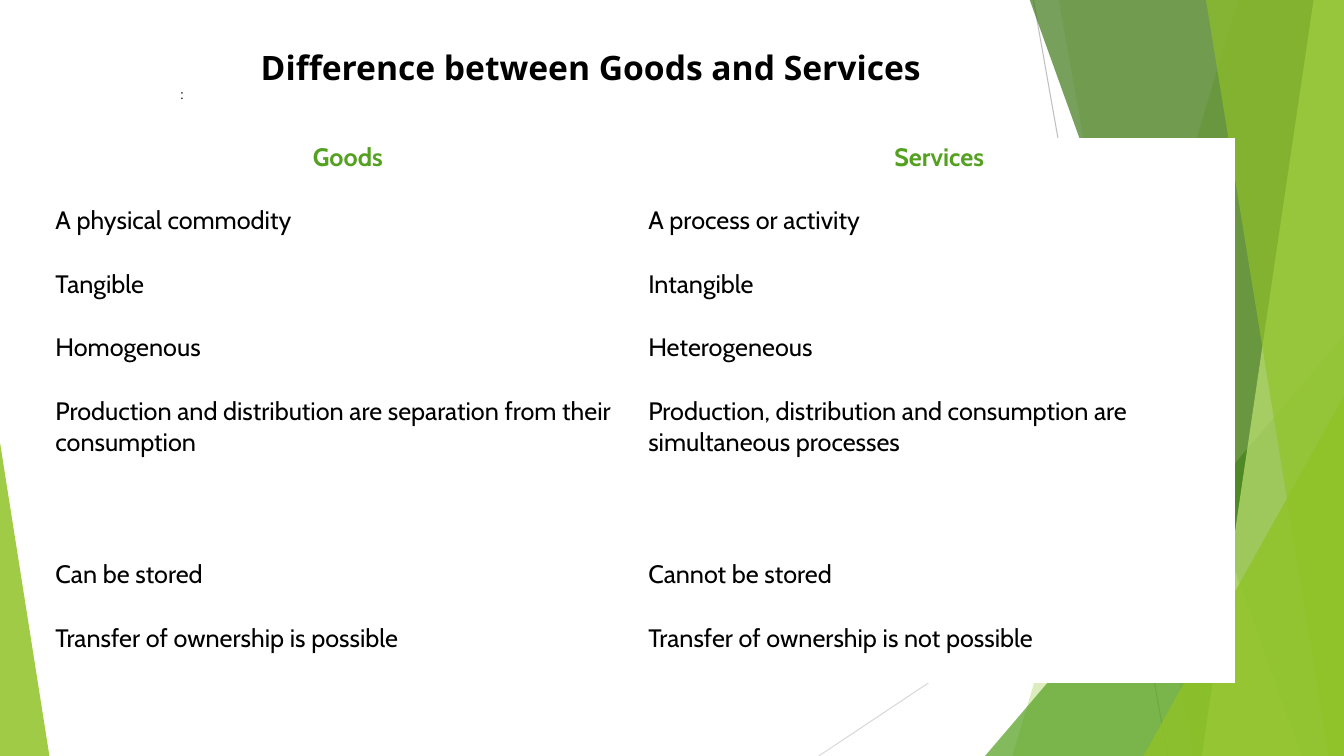
from dataclasses import dataclass

from lxml import etree
from pptx import Presentation
from pptx.dml.color import RGBColor
from pptx.enum.shapes import MSO_CONNECTOR, MSO_SHAPE
from pptx.enum.text import MSO_ANCHOR, PP_ALIGN
from pptx.oxml.ns import qn
from pptx.util import Emu, Inches, Pt

STRAIGHT = MSO_CONNECTOR.STRAIGHT
RECT, TRIANGLE = MSO_SHAPE.RECTANGLE, MSO_SHAPE.ISOSCELES_TRIANGLE
LEFT, CENTER = PP_ALIGN.LEFT, PP_ALIGN.CENTER
MIDDLE = MSO_ANCHOR.MIDDLE


@dataclass(frozen=True)
class Theme:
    lime: str = "90C226"
    green: str = "54A021"
    forest: str = "3F7819"
    pale: str = "C0E474"
    white: str = "FFFFFF"
    black: str = "000000"
    gray: str = "BFBFBF"
    light_gray: str = "D9D9D9"
    title_font: str = "Open Sans"
    body_font: str = "Cabin"
    title_size: float = 24
    body_size: float = 18
    small_size: float = 9


T = Theme()
W, H = 13.33, 7.5

TITLE = "Difference between Goods and Services"
MARK = ":"
ROWS = [
    ("Goods", "Services"),
    ("A physical commodity", "A process or activity"),
    ("Tangible", "Intangible"),
    ("Homogenous", "Heterogeneous"),
    ("Production and distribution are separation from their consumption",
     "Production, distribution and consumption are simultaneous processes"),
    ("Can be stored", "Cannot be stored"),
    ("Transfer of ownership is possible", "Transfer of ownership is not possible"),
]
COL_WIDTHS = (5.88, 5.85)
ROW_HEIGHT, TALL_ROW, TALL_HEIGHT = 0.63, 4, 1.62
TABLE_LEFT, TABLE_TOP = 0.51, 1.37
CELL_INSET = 0.04
TITLE_BOX = (1.79, 0.46, 8.14, 0.56)

LINES = [
    ((10.25, 0), (11.58, H), T.gray),
    ((W, 4.03), (8.12, H), T.light_gray),
]
FACETS = [
    ("band", 12.28, 10.04, T.lime, 30),
    ("band", 10.5, 11.83, T.lime, 20),
    ("right", 3.56, 4.17, T.green, 72),
    ("band", 10.21, 12.91, T.forest, 70),
    ("band", 13.03, 11.92, T.pale, 70),
    ("band", 11.96, 13.18, T.lime, 65),
    ("right", 1.99, 3.57, T.lime, 80),
    ("left", 0.49, 3.11, T.lime, 85),
]


def paint(shape, color, opacity=100):
    shape.shadow.inherit = False
    shape.line.fill.background()
    shape.fill.solid()
    shape.fill.fore_color.rgb = RGBColor.from_string(color)
    if opacity < 100:
        clr = shape.fill._xPr.find(qn("a:solidFill"))[0]
        etree.SubElement(clr, qn("a:alpha")).set("val", str(opacity * 1000))


def write(p, text, font=T.body_font, size=T.body_size, color=T.black,
          bold=False, align=LEFT):
    p.alignment = align
    r = p.add_run()
    r.text = text
    r.font.name = font
    r.font.size = Pt(size)
    r.font.bold = bold
    r.font.color.rgb = RGBColor.from_string(color)


def add_line(s, start, end, color):
    c = s.shapes.add_connector(STRAIGHT, *map(Inches, start + end))
    c.line.color.rgb = RGBColor.from_string(color)
    c.line.width = Pt(0.75)
    etree.SubElement(c._element.spPr, qn("a:effectLst"))


def add_band(s, top_x, bottom_x):
    corners = [(top_x, -0.01), (W, -0.01), (W, H), (bottom_x, H)]
    points = [(Inches(x), Inches(y)) for x, y in corners]
    fb = s.shapes.build_freeform(*points[0], scale=1.0)
    fb.add_line_segments(points[1:], close=True)
    return fb.convert_to_shape()


def add_corner(s, side, width, height):
    x = W - width if side == "right" else 0
    sp = s.shapes.add_shape(TRIANGLE, *map(Inches, (x, H - height, width, height)))
    sp.adjustments[0] = 1 if side == "right" else 0
    return sp


def add_facets(s):
    for kind, a, b, color, opacity in FACETS:
        sp = add_band(s, a, b) if kind == "band" else add_corner(s, kind, a, b)
        paint(sp, color, opacity)


def add_comparison(s):
    heights = [TALL_HEIGHT if i == TALL_ROW else ROW_HEIGHT for i in range(len(ROWS))]
    box = (TABLE_LEFT, TABLE_TOP, sum(COL_WIDTHS), sum(heights))
    table = s.shapes.add_table(len(ROWS), len(COL_WIDTHS), *map(Inches, box)).table
    table.first_row = table.horz_banding = False
    for col, width in zip(table.columns, COL_WIDTHS):
        col.width = Inches(width)
    for i, (row, height) in enumerate(zip(table.rows, heights)):
        row.height = Inches(height)
        style = dict(color=T.green, bold=True, align=CENTER) if i == 0 else {}
        for cell, text in zip(row.cells, ROWS[i]):
            cell.fill.solid()
            cell.fill.fore_color.rgb = RGBColor.from_string(T.white)
            cell.margin_left = cell.margin_right = Inches(CELL_INSET)
            cell.margin_top = cell.margin_bottom = Inches(CELL_INSET)
            write(cell.text_frame.paragraphs[0], text, **style)


def add_title(s):
    sp = s.shapes.add_shape(RECT, *map(Inches, TITLE_BOX))
    paint(sp, T.white)
    tf = sp.text_frame
    tf.word_wrap = True
    tf.vertical_anchor = MIDDLE
    tf.margin_left = tf.margin_right = tf.margin_top = tf.margin_bottom = Emu(0)
    write(tf.paragraphs[0], TITLE, font=T.title_font, size=T.title_size,
          bold=True, align=CENTER)
    write(tf.add_paragraph(), MARK, font=T.title_font, size=T.small_size)


def main():
    prs = Presentation()
    prs.slide_width, prs.slide_height = Inches(W), Inches(H)
    s = prs.slides.add_slide(prs.slide_layouts[6])
    for line in LINES:
        add_line(s, *line)
    add_facets(s)
    add_comparison(s)
    add_title(s)
    prs.save("out.pptx")


if __name__ == "__main__":
    main()
